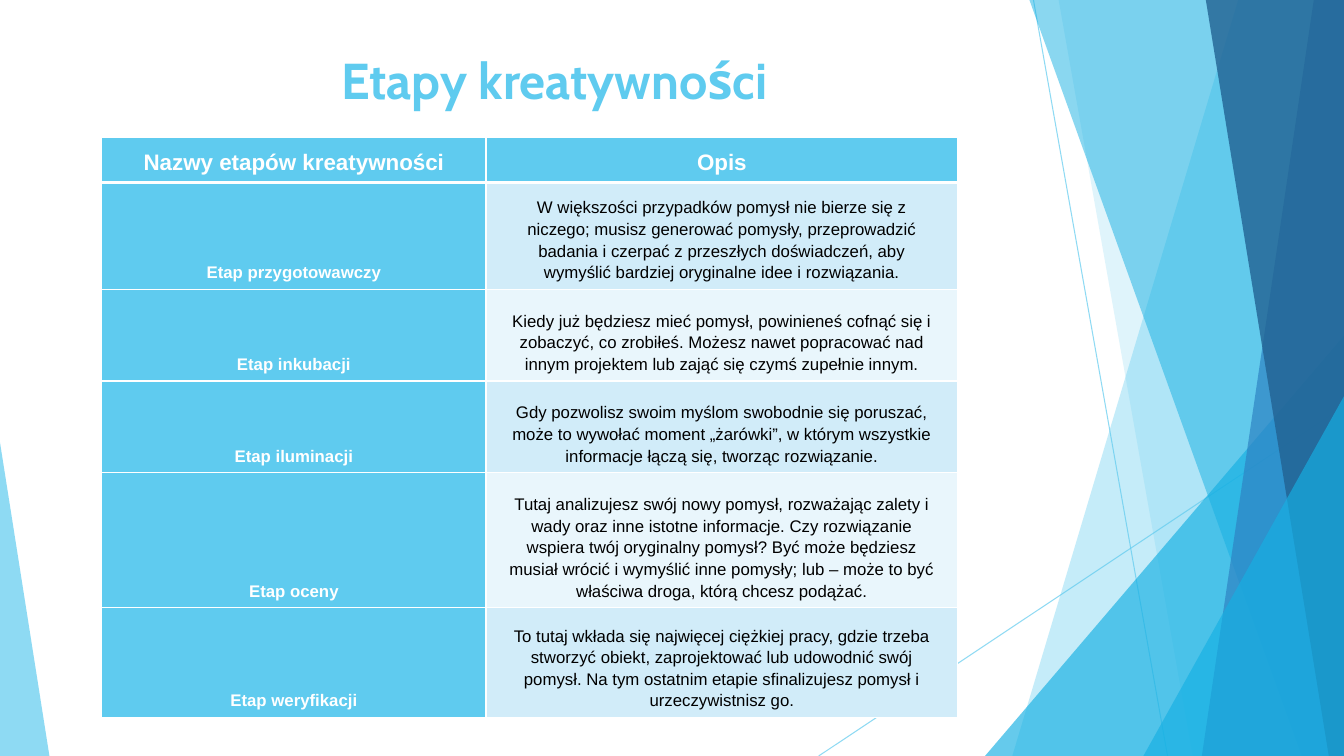
from dataclasses import dataclass

from lxml.etree import SubElement
from pptx import Presentation
from pptx.dml.color import RGBColor as RGB
from pptx.enum.shapes import MSO_CONNECTOR as CONN, MSO_SHAPE as SHAPE
from pptx.enum.text import MSO_ANCHOR as ANCHOR, PP_ALIGN as ALIGN
from pptx.oxml.ns import qn
from pptx.util import Pt

EMU_PER_PX = 9144


@dataclass(frozen=True)
class Theme:
    """Colours, fonts and type sizes of the slide."""
    sky: str = "5FCBEF"
    cyan: str = "16B0E3"
    blue: str = "2E83C3"
    navy: str = "226292"
    pale: str = "D1ECF9"
    paler: str = "E9F6FC"
    white: str = "FFFFFF"
    black: str = "000000"
    title_font: str = "Cabin"
    body_font: str = "Arial"
    title_size: int = 36
    header_size: int = 16
    body_size: int = 12


T = Theme()

LINES = [(1025, 0, 1158, 750), (1333, 403, 812, 750)]
FACETS = [
    ("band", (1228, 1333, 1333, 1004), T.sky, 36),
    ("band", (1050, 1333, 1333, 1183), T.sky, 20),
    ("triangle", (977, 333, 356, 417, 1), T.cyan, 66),
    ("band", (1021, 1333, 1333, 1291), T.cyan, 50),
    ("band", (1303, 1333, 1333, 1192), T.blue, 70),
    ("band", (1196, 1333, 1333, 1318), T.navy, 80),
    ("triangle", (1134, 393, 199, 357, 1), T.cyan, 66),
    ("triangle", (0, 439, 49, 311, 0), T.sky, 70),
]
COLUMNS = [381, 468]
ROWS = [45, 100, 91, 91, 134, 109]
STAGES = [
    ("Nazwy etapów kreatywności", "Opis"),
    ("Etap przygotowawczy",
     "W większości przypadków pomysł nie bierze się z niczego; musisz generować "
     "pomysły, przeprowadzić badania i czerpać z przeszłych doświadczeń, aby "
     "wymyślić bardziej oryginalne idee i rozwiązania."),
    ("Etap inkubacji",
     "Kiedy już będziesz mieć pomysł, powinieneś cofnąć się i zobaczyć, co "
     "zrobiłeś. Możesz nawet popracować nad innym projektem lub zająć się czymś "
     "zupełnie innym."),
    ("Etap iluminacji",
     "Gdy pozwolisz swoim myślom swobodnie się poruszać, może to wywołać moment "
     "„żarówki”, w którym wszystkie informacje łączą się, tworząc rozwiązanie."),
    ("Etap oceny",
     "Tutaj analizujesz swój nowy pomysł, rozważając zalety i wady oraz inne "
     "istotne informacje. Czy rozwiązanie wspiera twój oryginalny pomysł? Być "
     "może będziesz musiał wrócić i wymyślić inne pomysły; lub – może to być "
     "właściwa droga, którą chcesz podążać."),
    ("Etap weryfikacji",
     "To tutaj wkłada się najwięcej ciężkiej pracy, gdzie trzeba stworzyć obiekt, "
     "zaprojektować lub udowodnić swój pomysł. Na tym ostatnim etapie "
     "sfinalizujesz pomysł i urzeczywistnisz go."),
]


def px(*lengths):
    """Turn pixel lengths into a list of EMU."""
    return [n * EMU_PER_PX for n in lengths]


def paint(fill, color, alpha):
    """Give a fill a solid colour with an opacity in percent."""
    fill.solid()
    fill.fore_color.rgb = RGB.from_string(color)
    clr = fill._xPr.find(qn("a:solidFill"))[0]
    SubElement(clr, qn("a:alpha"), val=str(alpha * 1000))


def add_line(shapes, ends):
    """Draw a thin translucent line."""
    line = shapes.add_connector(CONN.STRAIGHT, *px(*ends))
    line.line.width = Pt(0.75)
    paint(line.line.fill, T.sky, 70)
    SubElement(line._element.spPr, qn("a:effectLst"))


def add_band(shapes, xs):
    """Build a full-height four-sided band: top left, top right, bottom right, bottom left."""
    corners = list(zip(xs, (0, 0, 750, 750)))
    builder = shapes.build_freeform(*corners[0], scale=EMU_PER_PX)
    builder.add_line_segments(corners[1:], close=True)
    return builder.convert_to_shape()


def add_triangle(shapes, geometry):
    """Add a triangle whose apex sits at the given share of its width."""
    *box, apex = geometry
    sp = shapes.add_shape(SHAPE.ISOSCELES_TRIANGLE, *px(*box))
    sp.adjustments[0] = apex
    return sp


def add_facet(shapes, kind, geometry, color, alpha):
    """Add one translucent piece of the background."""
    sp = {"band": add_band, "triangle": add_triangle}[kind](shapes, geometry)
    sp.shadow.inherit = False
    sp.line.fill.background()
    paint(sp.fill, color, alpha)


def write(tf, text, font, size, color, bold):
    """Write one centred run and return its paragraph."""
    tf.word_wrap = True
    p = tf.paragraphs[0]
    p.alignment = ALIGN.CENTER
    r = p.add_run()
    r.text = text
    r.font.name, r.font.size, r.font.bold = font, Pt(size), bold
    r.font.color.rgb = RGB.from_string(color)
    return p


def add_title(shapes, text):
    """Add the slide title."""
    tf = shapes.add_textbox(*px(80, 44, 940, 144)).text_frame
    tf.vertical_anchor = ANCHOR.TOP
    write(tf, text, T.title_font, T.title_size, T.sky, True)


def set_borders(cell, widths):
    """Put white borders on a cell, widths in points by side."""
    tc_pr = cell._tc.get_or_add_tcPr()
    for side, width in widths.items():
        ln = SubElement(tc_pr, qn(f"a:ln{side}"), w=str(Pt(width)))
        SubElement(SubElement(ln, qn("a:solidFill")), qn("a:srgbClr"), val=T.white)


def fill_cell(cell, text, row, col):
    """Style one table cell by its place and write its text."""
    strong = row == 0 or col == 0
    fill = T.sky if strong else (T.pale if row % 2 else T.paler)
    set_borders(cell, {"L": 1, "R": 1, "T": 3 if row == 1 else 1, "B": 1 if row else 3})
    cell.fill.solid()
    cell.fill.fore_color.rgb = RGB.from_string(fill)
    cell.vertical_anchor = ANCHOR.BOTTOM
    cell.margin_left, cell.margin_right, cell.margin_top, cell.margin_bottom = px(18, 18, 7, 7)
    size = T.body_size if row else T.header_size
    p = write(cell.text_frame, text, T.body_font, size, T.white if strong else T.black, strong)
    p.line_spacing = 1.15


def add_stage_table(shapes):
    """Add the table of creativity stages."""
    frame = shapes.add_table(len(ROWS), len(COLUMNS), *px(101, 136, sum(COLUMNS), sum(ROWS)))
    table = frame.table
    for column, width in zip(table.columns, px(*COLUMNS)):
        column.width = width
    for row, height in zip(table.rows, px(*ROWS)):
        row.height = height
    for i, stage in enumerate(STAGES):
        for j, text in enumerate(stage):
            fill_cell(table.cell(i, j), text, i, j)


def main():
    """Build and save the slide."""
    prs = Presentation()
    prs.slide_width, prs.slide_height = px(1333, 750)
    shapes = prs.slides.add_slide(prs.slide_layouts[6]).shapes
    for ends in LINES:
        add_line(shapes, ends)
    for facet in FACETS:
        add_facet(shapes, *facet)
    add_title(shapes, "Etapy kreatywności")
    add_stage_table(shapes)
    prs.save("out.pptx")


if __name__ == "__main__":
    main()
